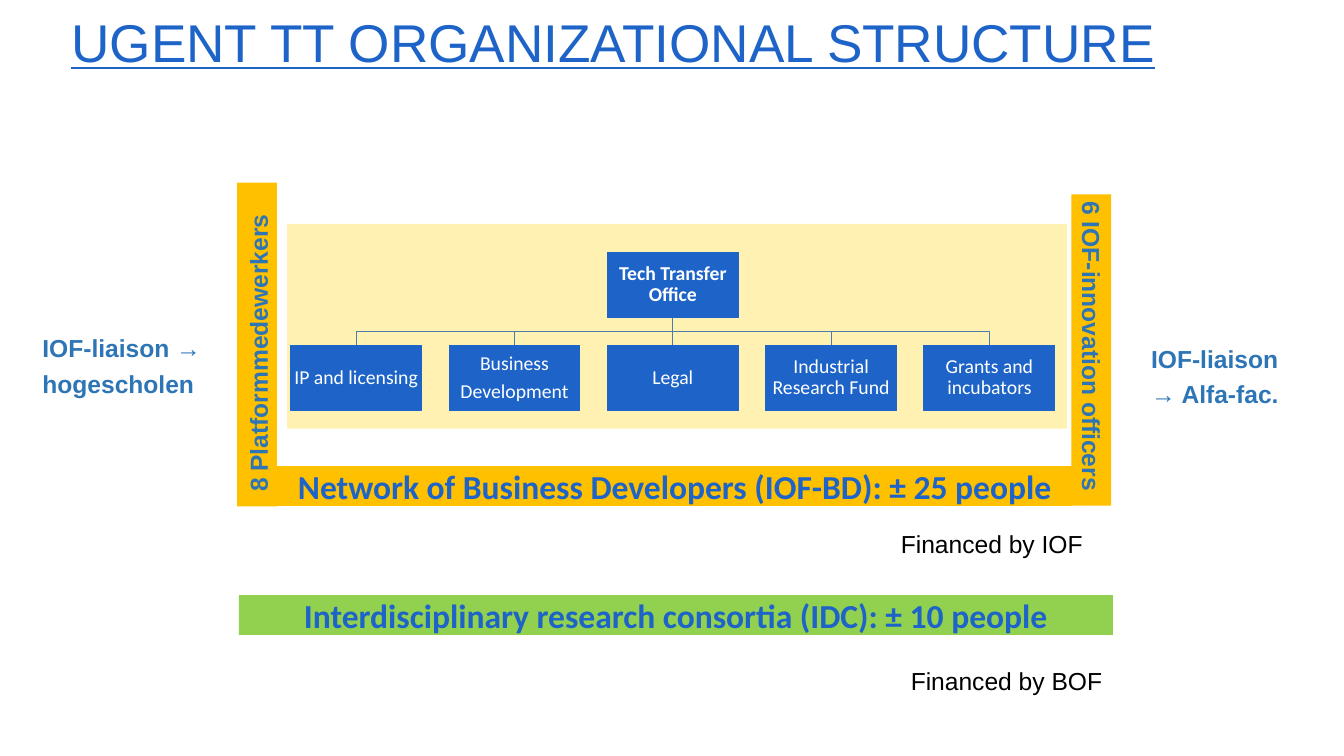
"""Build the UGent TT organizational structure slide."""
from dataclasses import dataclass

from lxml import etree
from pptx import Presentation
from pptx.dml.color import RGBColor
from pptx.enum.shapes import MSO_CONNECTOR, MSO_SHAPE
from pptx.enum.text import MSO_ANCHOR, PP_ALIGN
from pptx.oxml.ns import qn
from pptx.util import Pt

RECT = MSO_SHAPE.RECTANGLE
STRAIGHT = MSO_CONNECTOR.STRAIGHT
TOP, MIDDLE, BOTTOM = MSO_ANCHOR.TOP, MSO_ANCHOR.MIDDLE, MSO_ANCHOR.BOTTOM
LEFT, CENTER = PP_ALIGN.LEFT, PP_ALIGN.CENTER

WHITE = RGBColor(0xFF, 0xFF, 0xFF)
BLACK = RGBColor(0x00, 0x00, 0x00)
BLUE = RGBColor(0x1E, 0x64, 0xC8)
LABEL_BLUE = RGBColor(0x2E, 0x75, 0xB6)
LINE_BLUE = RGBColor(0x49, 0x7C, 0xAB)
YELLOW = RGBColor(0xFF, 0xD2, 0x00)
AMBER = RGBColor(0xFF, 0xC0, 0x00)
GREEN = RGBColor(0x92, 0xD0, 0x50)

BOX_W, BOX_H, BOX_PITCH = 133, 66.4, 160.8
ROOT_X, ROOT_Y, UNIT_Y = 683.4, 256.4, 350.8
BUS_Y = 336.8


@dataclass
class Bar:
    x: float
    y: float
    w: float
    h: float
    fill: RGBColor
    text: str = ""
    rotation: int = 0


@dataclass
class Label:
    text: str
    x: float
    y: float
    w: float
    h: float
    color: RGBColor = LABEL_BLUE
    bold: bool = True
    rotation: int = 0


BARS = [
    Bar(281.5, 473.8, 807.8, 40.3, AMBER, "Network of Business Developers (IOF-BD): ± 25 people"),
    Bar(96.5, 329.8, 329, 40.3, AMBER, rotation=270),
    Bar(950.4, 335.5, 316.1, 40.3, AMBER, rotation=270),
    Bar(242.6, 604.8, 887.8, 40.3, GREEN, "Interdisciplinary research consortia (IDC): ± 10 people"),
]
LABELS = [
    Label("Financed by BOF", 918, 666.7, 244.1, 40.3, BLACK, False),
    Label("6 IOF-innovation officers", 949, 342, 329, 40.3, rotation=90),
    Label("8 Platformmedewerkers", 108, 337, 299.5, 40.3, rotation=270),
    Label("IOF-liaison → Alfa-fac.", 1162.1, 339.8, 174.2, 76.3),
    Label("IOF-liaison →\nhogescholen", 36, 329, 203.8, 76.3),
    Label("Financed by IOF", 907.9, 527.8, 244.1, 40.3, BLACK, False),
]
UNITS = ["IP and licensing", "Business\nDevelopment", "Legal",
         "Industrial Research Fund", "Grants and incubators"]


def write(sp, text: str, *, size: float, color: RGBColor, font: str = "Arial",
          bold: bool = False, underline: bool = False, align=LEFT, anchor=TOP,
          spacing: float = 1.0, after: float = 0, insets=(7.2, 3.6), wrap: bool = True) -> None:
    tf = sp.text_frame
    tf.word_wrap = wrap
    tf.vertical_anchor = anchor
    tf.margin_left = tf.margin_right = Pt(insets[0])
    tf.margin_top = tf.margin_bottom = Pt(insets[1])
    for i, line in enumerate(text.split("\n")):
        p = tf.add_paragraph() if i else tf.paragraphs[0]
        p.alignment = align
        p.line_spacing = spacing
        p.space_after = Pt(after)
        r = p.add_run()
        r.text = line
        r.font.name = font
        r.font.size = Pt(size)
        r.font.bold = bold
        r.font.underline = underline
        r.font.color.rgb = color


def add_rect(s, x: float, y: float, w: float, h: float, fill: RGBColor, rotation: int = 0):
    sp = s.shapes.add_shape(RECT, Pt(x), Pt(y), Pt(w), Pt(h))
    sp.shadow.inherit = False
    sp.fill.solid()
    sp.fill.fore_color.rgb = fill
    sp.line.fill.background()
    sp.rotation = rotation
    return sp


def add_textbox(s, x: float, y: float, w: float, h: float, rotation: int = 0):
    sp = s.shapes.add_textbox(Pt(x), Pt(y), Pt(w), Pt(h))
    sp.rotation = rotation
    return sp


def add_link(s, x: float) -> None:
    start_y = ROOT_Y + BOX_H
    if x == ROOT_X:
        sp = s.shapes.add_connector(STRAIGHT, Pt(x), Pt(start_y), Pt(x), Pt(UNIT_Y))
        etree.SubElement(sp._element.spPr, qn("a:effectLst"))
    else:
        builder = s.shapes.build_freeform(Pt(ROOT_X), Pt(start_y))
        corners = [(ROOT_X, BUS_Y), (x, BUS_Y), (x, UNIT_Y)]
        builder.add_line_segments([(Pt(px), Pt(py)) for px, py in corners], close=False)
        sp = builder.convert_to_shape()
        sp.shadow.inherit = False
        sp.fill.background()
    sp.line.color.rgb = LINE_BLUE
    sp.line.width = Pt(1)


def add_org_box(s, text: str, center_x: float, y: float, bold: bool = False) -> None:
    sp = add_rect(s, center_x - BOX_W / 2, y, BOX_W, BOX_H, BLUE)
    sp.line.color.rgb = BLUE
    sp.line.width = Pt(1)
    write(sp, text, size=20, color=WHITE, font="Calibri", bold=bold, align=CENTER,
          anchor=MIDDLE, spacing=0.9, after=7, insets=(0.9, 0.9))


def add_bar(s, bar: Bar) -> None:
    sp = add_rect(s, bar.x, bar.y, bar.w, bar.h, bar.fill, bar.rotation)
    if bar.text:
        write(sp, bar.text, size=34.1, color=BLUE, font="Calibri", bold=True,
              align=CENTER, anchor=MIDDLE, insets=(10, 5), wrap=False)


def add_label(s, label: Label) -> None:
    sp = add_textbox(s, label.x, label.y, label.w, label.h, label.rotation)
    write(sp, label.text, size=25, color=label.color, bold=label.bold, spacing=1.2)


def main() -> None:
    prs = Presentation()
    prs.slide_width, prs.slide_height = Pt(1365.12), Pt(768.24)
    s = prs.slides.add_slide(prs.slide_layouts[6])

    panel = add_rect(s, 291.6, 227.5, 792, 208.1, YELLOW)
    color = panel._element.spPr.find(qn("a:solidFill")).find(qn("a:srgbClr"))
    etree.SubElement(color, qn("a:alpha"), val="30000")

    title = add_textbox(s, 65.5, 10.8, 1237, 67.7)
    write(title, "UGENT TT ORGANIZATIONAL STRUCTURE", size=54, color=BLUE,
          underline=True, anchor=BOTTOM, spacing=0.9)

    centers = [ROOT_X + (i - len(UNITS) // 2) * BOX_PITCH for i in range(len(UNITS))]
    for x in centers:
        add_link(s, x)
    add_org_box(s, "Tech Transfer Office", ROOT_X, ROOT_Y, bold=True)
    for x, unit in zip(centers, UNITS):
        add_org_box(s, unit, x, UNIT_Y)

    for bar in BARS:
        add_bar(s, bar)
    for label in LABELS:
        add_label(s, label)
    prs.save("out.pptx")


if __name__ == "__main__":
    main()
